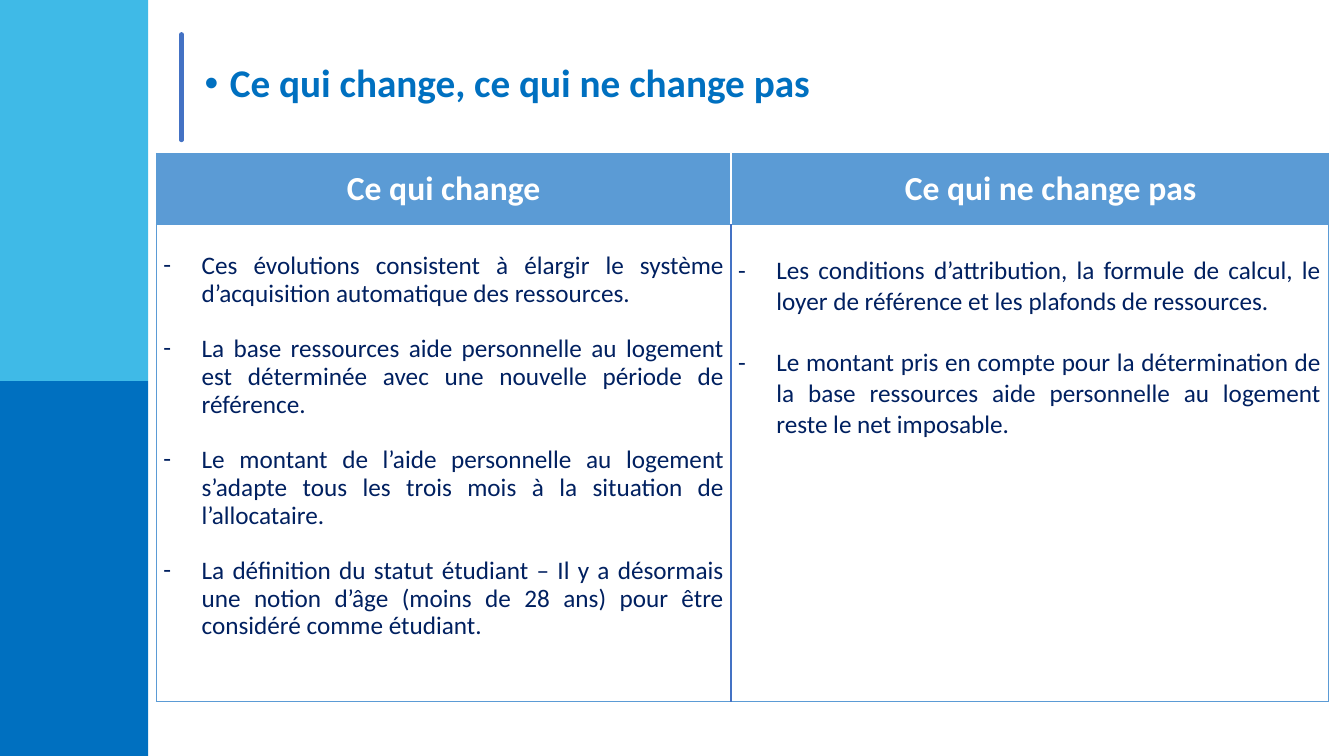
from pptx import Presentation
from pptx.dml.color import RGBColor
from pptx.enum.shapes import MSO_CONNECTOR as CONN, MSO_SHAPE as SHAPE
from pptx.enum.text import MSO_ANCHOR as ANCHOR, MSO_AUTO_SIZE as FIT, PP_ALIGN as ALIGN
from pptx.oxml.ns import qn
from pptx.util import Inches, Pt
from lxml.etree import SubElement

FONT = "Calibri"
WHITE = RGBColor(0xFF, 0xFF, 0xFF)
SKY = RGBColor(0x3F, 0xBA, 0xE7)
BLUE = RGBColor(0x00, 0x70, 0xC0)
RULE = RGBColor(0x44, 0x72, 0xC4)
HEADER = RGBColor(0x5B, 0x9B, 0xD5)
NAVY = RGBColor(0x00, 0x20, 0x60)

WIDTH, HEIGHT = 13.33, 7.5
BAND_W, BAND_SPLIT = 1.47, 3.78
TABLE_X, TABLE_Y = 1.55, 1.52
COLS, ROWS = (5.7, 5.92), (0.71, 4.73)

THIN = (HEADER, 0.5)
GAP = (WHITE, 2.25)
DIVIDER = (RULE, 2.25)

CHANGES = [
    "Ces évolutions consistent à élargir le système d’acquisition automatique des ressources.",
    "La base ressources aide personnelle au logement est déterminée avec une nouvelle période de référence.",
    "Le montant de l’aide personnelle au logement s’adapte tous les trois mois à la situation de l’allocataire.",
    "La définition du statut étudiant – Il y a désormais une notion d’âge (moins de 28 ans) pour être considéré comme étudiant.",
]
UNCHANGED = [
    "Les conditions d’attribution, la formule de calcul, le loyer de référence et les plafonds de ressources.",
    "Le montant pris en compte pour la détermination de la base ressources aide personnelle au logement reste le net imposable.",
]


def add_band(s, top, height, color):
    sp = s.shapes.add_shape(SHAPE.RECTANGLE, 0, Inches(top), Inches(BAND_W), Inches(height))
    sp.shadow.inherit = False
    sp.fill.solid()
    sp.fill.fore_color.rgb = color
    sp.line.fill.background()


def add_rule(s, x, top, bottom):
    ln = s.shapes.add_connector(CONN.STRAIGHT, Inches(x), Inches(top), Inches(x), Inches(bottom))
    ln.line.color.rgb = RULE
    ln.line.width = Pt(3)
    ln.line._get_or_add_ln().set("cap", "rnd")
    SubElement(ln._element.spPr, qn("a:effectLst"))


def indent(p, left, first=0.0):
    pPr = p._p.get_or_add_pPr()
    pPr.set("marL", str(Inches(left)))
    pPr.set("indent", str(Inches(first)))
    return pPr


def add_bullet(p, char, hang):
    pPr = indent(p, hang, -hang)
    SubElement(pPr, qn("a:buFont"), typeface="Arial" if char == "•" else FONT)
    SubElement(pPr, qn("a:buChar"), char=char)


def add_run(p, text, size, color, bold=False):
    r = p.add_run()
    r.text = text
    r.font.name = FONT
    r.font.size = Pt(size)
    r.font.bold = bold
    r.font.color.rgb = color


def set_title(s, text):
    sp = s.shapes.title
    sp.left, sp.top, sp.width, sp.height = (Inches(v) for v in (1.93, 0.63, 11.01, 0.43))
    tf = sp.text_frame
    tf.auto_size = FIT.NONE
    tf.word_wrap = True
    tf.vertical_anchor = ANCHOR.MIDDLE
    p = tf.paragraphs[0]
    add_bullet(p, "•", 0.25)
    p.alignment = ALIGN.LEFT
    p.line_spacing = 0.9
    add_run(p, text, 28, BLUE, True)


def set_borders(cell, left, right):
    tcPr = cell._tc.get_or_add_tcPr()
    for side, (color, width) in zip("LRTB", (left, right, THIN, THIN)):
        ln = SubElement(tcPr, qn(f"a:ln{side}"), w=str(Pt(width)))
        fill = SubElement(ln, qn("a:solidFill"))
        SubElement(fill, qn("a:srgbClr"), val=str(color))


def set_margins(cell, top=0.0):
    cell.margin_left = cell.margin_right = Inches(0.07)
    cell.margin_top, cell.margin_bottom = Pt(top), 0


def fill_header(cell, text, left, right, shift=0.0):
    set_borders(cell, left, right)
    set_margins(cell)
    cell.fill.solid()
    cell.fill.fore_color.rgb = HEADER
    cell.vertical_anchor = ANCHOR.MIDDLE
    p = cell.text_frame.paragraphs[0]
    indent(p, shift)
    p.alignment = ALIGN.CENTER
    p.line_spacing = 0.9
    add_run(p, text, 24, WHITE, True)


def fill_list(cell, items, left, right, spacing):
    line = 22 * spacing
    set_borders(cell, left, right)
    set_margins(cell, line)
    cell.fill.background()
    tf = cell.text_frame
    for i, text in enumerate(items):
        p = tf.add_paragraph() if i else tf.paragraphs[0]
        add_bullet(p, "-", 0.38)
        p.alignment = ALIGN.JUSTIFY
        p.line_spacing = spacing
        if i:
            p.space_before = Pt(line)
        add_run(p, text, 18, NAVY)


def add_comparison(s):
    frame = s.shapes.add_table(2, 2, Inches(TABLE_X), Inches(TABLE_Y),
                               Inches(sum(COLS)), Inches(sum(ROWS)))
    table = frame.table
    table.horz_banding = False
    for col, width in zip(table.columns, COLS):
        col.width = Inches(width)
    for row, height in zip(table.rows, ROWS):
        row.height = Inches(height)
    fill_header(table.cell(0, 0), "Ce qui change", THIN, GAP)
    fill_header(table.cell(0, 1), "Ce qui ne change pas", GAP, THIN, 0.42)
    fill_list(table.cell(1, 0), CHANGES, THIN, DIVIDER, 0.9)
    fill_list(table.cell(1, 1), UNCHANGED, DIVIDER, THIN, 1.0)


def main():
    prs = Presentation()
    prs.slide_width, prs.slide_height = Inches(WIDTH), Inches(HEIGHT)
    s = prs.slides.add_slide(prs.slide_layouts[5])
    add_band(s, BAND_SPLIT, HEIGHT - BAND_SPLIT, BLUE)
    add_band(s, 0, BAND_SPLIT, SKY)
    add_rule(s, 1.8, 0.34, 1.39)
    set_title(s, "Ce qui change, ce qui ne change pas")
    add_comparison(s)
    prs.save("out.pptx")


if __name__ == "__main__":
    main()
